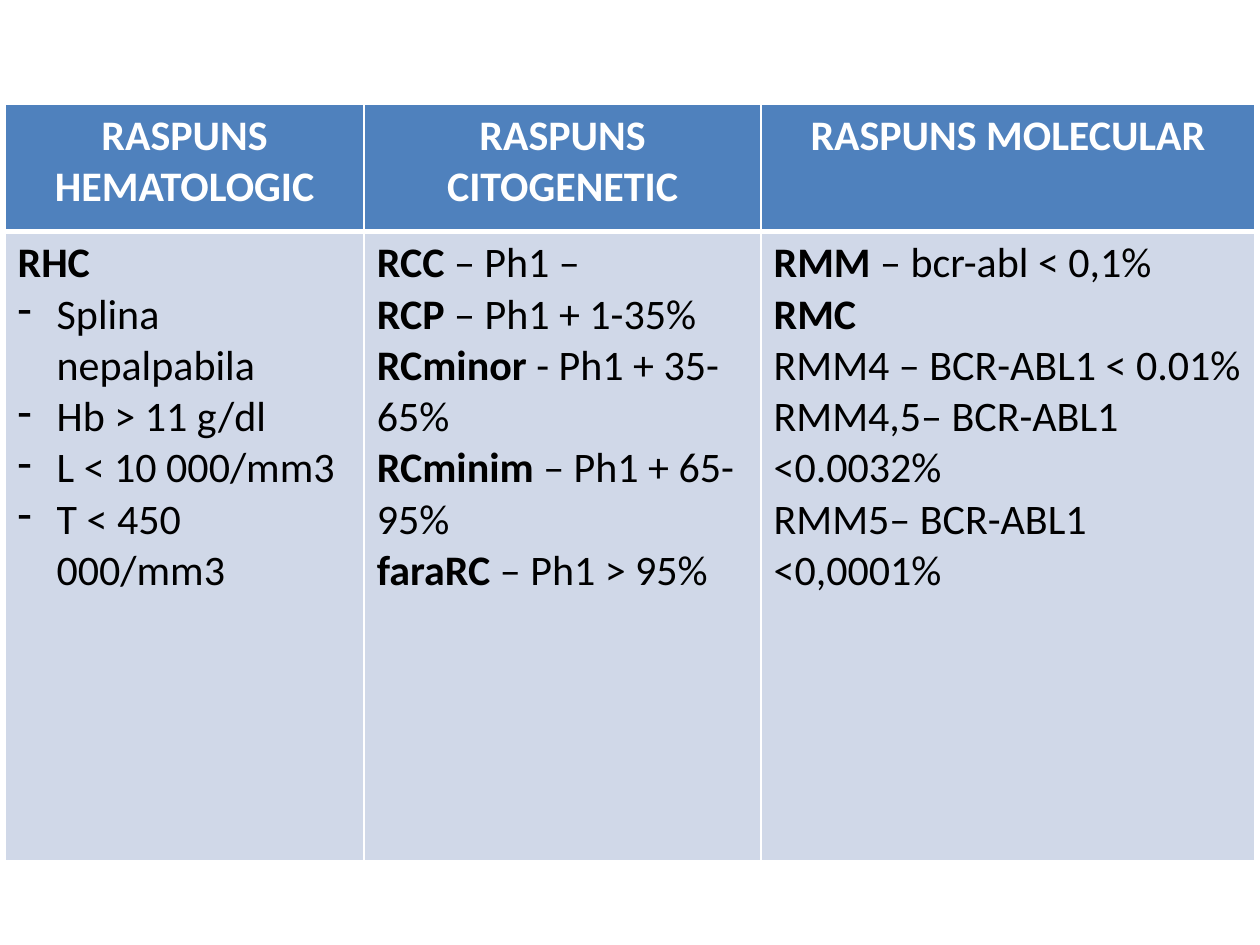
from lxml.etree import SubElement
from pptx import Presentation
from pptx.dml.color import RGBColor
from pptx.enum.text import PP_ALIGN
from pptx.oxml import parse_xml
from pptx.oxml.ns import nsdecls, qn
from pptx.util import Pt

SCALE = 9144  # EMU per px, 100 px to the inch
WHITE, BLACK, BLUE, PALE = "FFFFFF", "000000", "4F81BD", "D0D8E8"
COLS = [285, 315, 392]
ROWS = [101, 499]
HEADS = ["RASPUNS HEMATOLOGIC", "RASPUNS CITOGENETIC", "RASPUNS MOLECULAR"]
# Each line is (bold part, plain part).
BODY = [
    [("RHC", ""), ("", "Splina nepalpabila"), ("", "Hb > 11 g/dl"),
     ("", "L < 10 000/mm3"), ("", "T < 450 000/mm3")],
    [("RCC", " – Ph1 –"), ("RCP", " – Ph1 + 1-35%"),
     ("RCminor", " - Ph1 + 35-65%"), ("RCminim", " – Ph1 + 65-95%"),
     ("faraRC", " – Ph1 > 95%")],
    [("RMM", " – bcr-abl < 0,1%"), ("RMC", ""),
     ("", "RMM4 – BCR-ABL1 < 0.01%"), ("", "RMM4,5– BCR-ABL1 <0.0032%"),
     ("", "RMM5– BCR-ABL1 <0,0001%")],
]


def px(n):
    return n * SCALE


def rgb(code):
    return RGBColor.from_string(code)


def add_dash(para):
    """Give the paragraph a hanging dash bullet."""
    props = para._p.get_or_add_pPr()
    props.set("marL", str(px(31)))
    props.set("indent", str(-px(31)))
    SubElement(props, qn("a:buFontTx"))
    SubElement(props, qn("a:buChar"), char="-")


def set_edges(cell, top, bottom):
    """Draw white borders; top and bottom are widths in points."""
    props = cell._tc.get_or_add_tcPr()
    for i, (side, width) in enumerate(zip("LRTB", (1, 1, top, bottom))):
        props.insert(i, parse_xml(
            f'<a:ln{side} {nsdecls("a")} w="{Pt(width)}"><a:solidFill>'
            f'<a:srgbClr val="{WHITE}"/></a:solidFill></a:ln{side}>'))


def fill_cell(cell, lines, fill, color, align, dashes=False):
    cell.fill.solid()
    cell.fill.fore_color.rgb = rgb(fill)
    frame = cell.text_frame
    for i, (strong, plain) in enumerate(lines):
        para = frame.add_paragraph() if i else frame.paragraphs[0]
        para.alignment = align
        if dashes and not strong:
            add_dash(para)
        para.font.name = "Calibri"
        para.font.size = Pt(24)
        para.font.color.rgb = rgb(color)
        for text, bold in ((strong, True), (plain, False)):
            if text:
                run = para.add_run()
                run.text = text
                run.font.bold = bold


def add_grid(slide):
    table = slide.shapes.add_table(
        len(ROWS), len(COLS), px(4), px(83), px(sum(COLS)), px(sum(ROWS))).table
    for row, height in zip(table.rows, ROWS):
        row.height = px(height)
    for i, width in enumerate(COLS):
        table.columns[i].width = px(width)
        head, body = table.cell(0, i), table.cell(1, i)
        fill_cell(head, [(HEADS[i], "")], BLUE, WHITE, PP_ALIGN.CENTER)
        set_edges(head, 1, 3)
        fill_cell(body, BODY[i], PALE, BLACK, PP_ALIGN.LEFT, dashes=i == 0)
        set_edges(body, 3, 1)


def main():
    deck = Presentation()
    deck.slide_width, deck.slide_height = px(1000), px(750)
    add_grid(deck.slides.add_slide(deck.slide_layouts[6]))
    deck.save("out.pptx")


if __name__ == "__main__":
    main()
